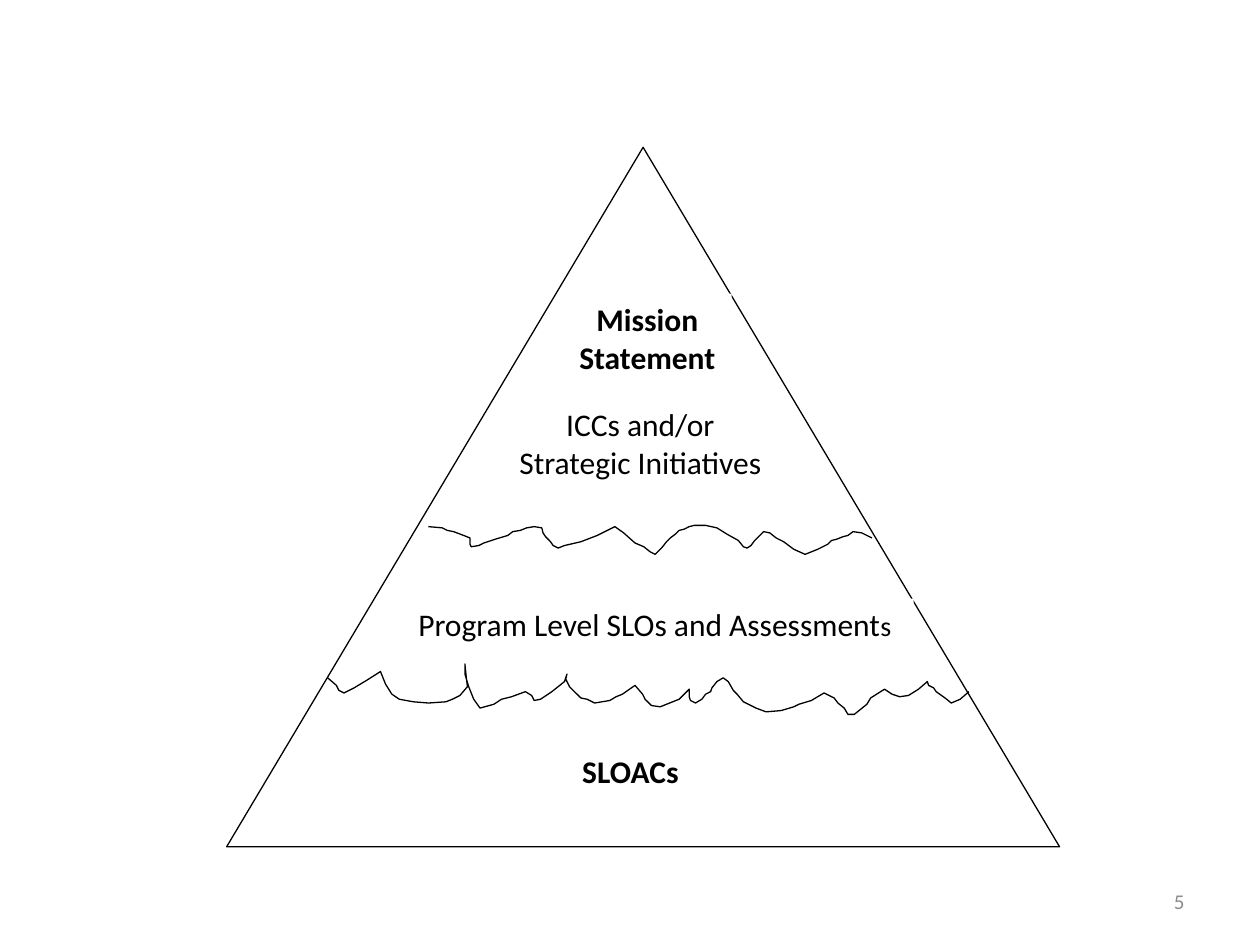
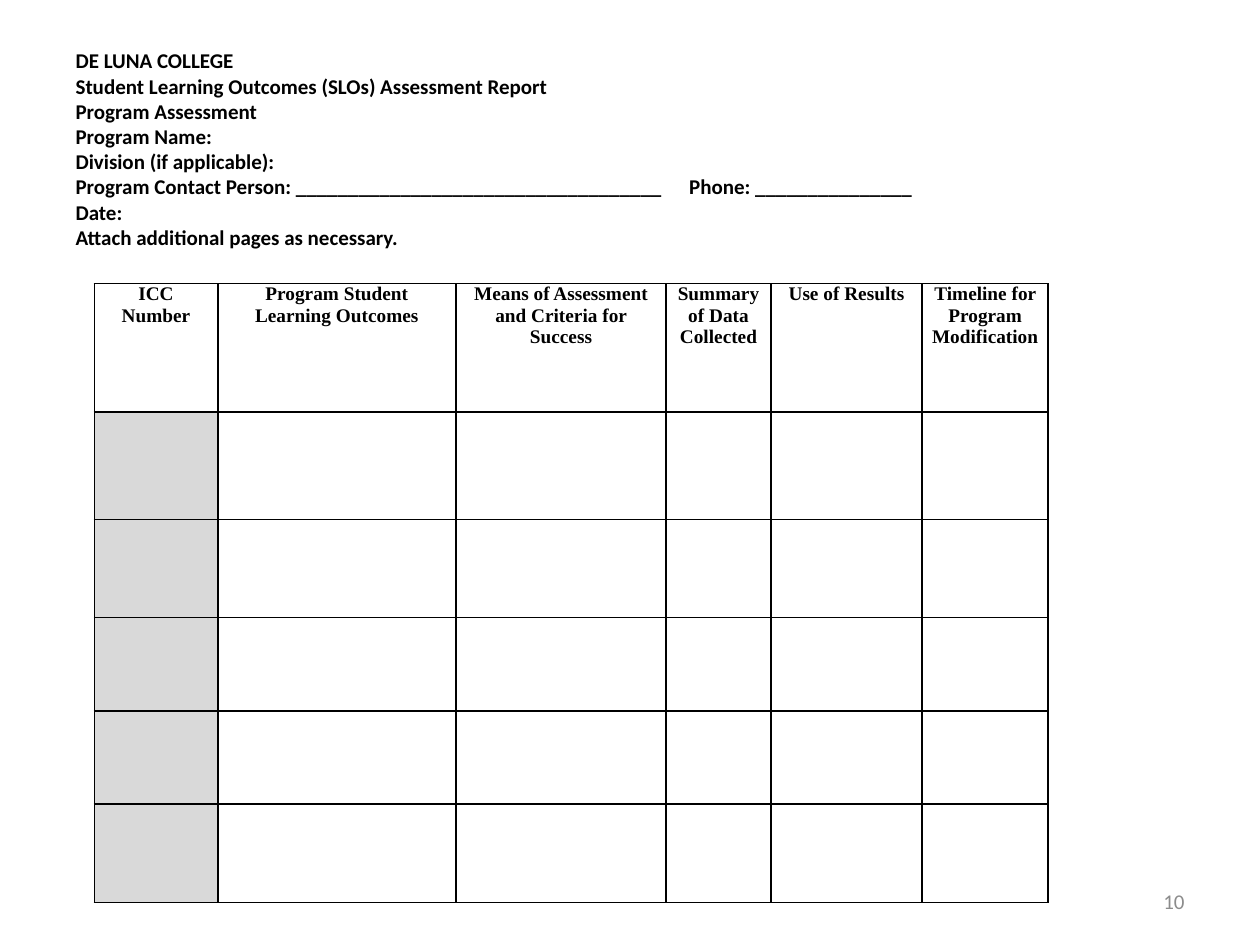
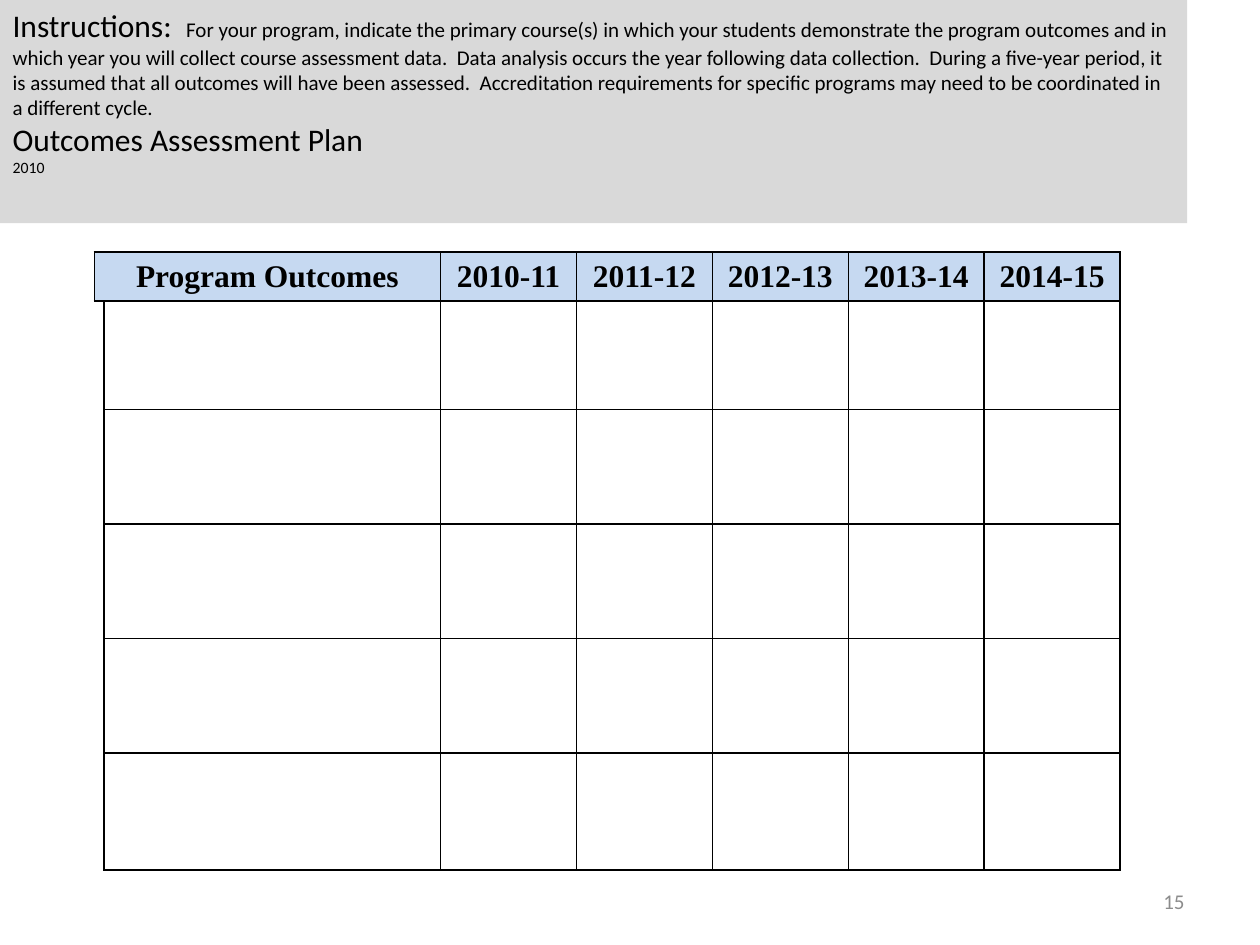
from dataclasses import dataclass

from lxml import etree
from pptx import Presentation
from pptx import util as u
from pptx.dml.color import RGBColor
from pptx.enum import shapes, text
from pptx.oxml import ns

Cm, Pt = u.Cm, u.Pt
LEFT, CENTER, RIGHT = text.PP_ALIGN.LEFT, text.PP_ALIGN.CENTER, text.PP_ALIGN.RIGHT
TOP, MIDDLE = text.MSO_ANCHOR.TOP, text.MSO_ANCHOR.MIDDLE


@dataclass(frozen=True)
class Theme:
    ink: str = "000000"
    paper: str = "FFFFFF"
    grey: str = "D9D9D9"
    blue: str = "C6D9F1"
    page: str = "8C8C8C"
    sans: str = "Calibri"
    serif: str = "Times New Roman"
    large: float = 18
    medium: float = 16
    small: float = 12
    label: float = 11
    tiny: float = 9
    outline: float = 0.75
    border: float = 1


THEME = Theme()
TITLE_ONLY, BLANK = 5, 6

# Points along the two torn edges, in hundredths of an inch
UPPER_EDGE = [
    (340, 418), (351, 419), (355, 421), (360, 422), (368, 425), (373, 427),
    (373, 432), (374, 434), (380, 433), (384, 431), (393, 428), (403, 425),
    (407, 422), (413, 421), (418, 419), (424, 418), (430, 419), (431, 423),
    (433, 426), (437, 430), (439, 433), (443, 435), (448, 433), (461, 430),
    (474, 425), (480, 422), (488, 418), (495, 423), (504, 431), (511, 434),
    (516, 438), (520, 440), (525, 435), (529, 430), (532, 427), (536, 424),
    (539, 421), (543, 420), (547, 418), (551, 417), (560, 417), (569, 419),
    (577, 424), (586, 429), (590, 434), (593, 435), (596, 433), (599, 429),
    (602, 426), (606, 422), (611, 423), (616, 427), (622, 430), (630, 436),
    (639, 440), (649, 436), (657, 432), (660, 429), (664, 428), (669, 426),
    (673, 425), (677, 422), (684, 423), (692, 427),
]
LOWER_EDGE = [
    (260, 538), (267, 544), (269, 548), (273, 550), (281, 546), (291, 540),
    (302, 533), (306, 543), (311, 551), (317, 555), (328, 557), (340, 558),
    (354, 557), (359, 555), (365, 552), (371, 545), (370, 537), (369, 527),
    (369, 535), (372, 545), (376, 555), (381, 562), (392, 559), (398, 555),
    (406, 553), (417, 549), (422, 552), (424, 556), (429, 555), (438, 549),
    (448, 541), (450, 535), (449, 539), (452, 545), (457, 550), (461, 554),
    (466, 555), (472, 558), (484, 556), (489, 553), (494, 551), (504, 544),
    (510, 551), (512, 555), (517, 560), (524, 561), (539, 555), (547, 547),
    (547, 553), (548, 556), (552, 558), (557, 555), (560, 551), (564, 549),
    (565, 546), (569, 541), (574, 538), (578, 541), (582, 548), (585, 551),
    (590, 557), (600, 562), (608, 565), (620, 564), (630, 561), (634, 559),
    (644, 556), (654, 550), (662, 554), (665, 558), (670, 562), (673, 567),
    (678, 567), (688, 559), (691, 554), (702, 547), (708, 551), (714, 553),
    (721, 552), (729, 547), (736, 541), (737, 544), (741, 546), (743, 549),
    (750, 554), (755, 558), (762, 555), (769, 549),
]


def set_all(target, values):
    for attribute, value in values.items():
        setattr(target, attribute, value)


def box(left, top, width, height):
    return dict(left=Cm(left), top=Cm(top), width=Cm(width), height=Cm(height))


def paint(fill, color):
    fill.solid()
    fill.fore_color.rgb = RGBColor.from_string(color)


def write(frame, lines, align=LEFT, anchor=TOP, color=THEME.ink, font=THEME.sans,
          bold=False, after=0):
    """Fill a text frame; each line is a list of (words, size) pieces."""
    set_all(frame, dict(word_wrap=True, vertical_anchor=anchor))
    for index, pieces in enumerate(lines):
        paragraph = frame.add_paragraph() if index else frame.paragraphs[0]
        set_all(paragraph, dict(alignment=align, space_after=Pt(after)))
        for words, size in pieces:
            run = paragraph.add_run()
            run.text = words
            set_all(run.font, dict(name=font, size=Pt(size), bold=bold))
            run.font.color.rgb = RGBColor.from_string(color)


def add_heading(slide, place, lines, **style):
    title = slide.shapes.title
    set_all(title, place)
    title.text_frame.auto_size = text.MSO_AUTO_SIZE.NONE
    write(title.text_frame, lines, **style)
    return title


def add_tab_stop(paragraph, position):
    properties = paragraph._p.get_or_add_pPr()
    stops = etree.SubElement(properties, ns.qn("a:tabLst"))
    etree.SubElement(stops, ns.qn("a:tab"), pos=str(position), algn="l")


def add_page_number(slide, number):
    corner = slide.shapes.add_textbox(**box(18.21, 17.65, 5.92, 1.02))
    write(corner.text_frame, [[(str(number), THEME.small)]],
          align=RIGHT, anchor=MIDDLE, color=THEME.page)


def outline(shape):
    shape.shadow.inherit = False
    shape.line.width = Pt(THEME.outline)
    shape.line.color.rgb = RGBColor.from_string(THEME.ink)


def add_pyramid(slide, place):
    pyramid = slide.shapes.add_shape(shapes.MSO_SHAPE.ISOSCELES_TRIANGLE, **place)
    paint(pyramid.fill, THEME.paper)
    outline(pyramid)


def add_level(slide, place, lines, **style):
    level = slide.shapes.add_textbox(**place)
    paint(level.fill, THEME.paper)
    write(level.text_frame, lines, align=CENTER, **style)


def add_torn_edge(slide, points):
    builder = slide.shapes.build_freeform(*points[0], scale=Cm(2.54) / 100)
    builder.add_line_segments(points[1:], close=False)
    edge = builder.convert_to_shape()
    edge.fill.background()
    outline(edge)


def add_borders(cell, sides):
    """Rule the named sides (of L, R, T, B) and clear the others."""
    properties = cell._tc.get_or_add_tcPr()
    for index, side in enumerate("LRTB"):
        rule = etree.Element(ns.qn(f"a:ln{side}"), w=str(Pt(THEME.border)))
        if side in sides:
            solid = etree.SubElement(rule, ns.qn("a:solidFill"))
            etree.SubElement(solid, ns.qn("a:srgbClr"), val=THEME.ink)
        else:
            etree.SubElement(rule, ns.qn("a:noFill"))
        properties.insert(index, rule)


def add_grid(slide, left, top, widths, heights, fill_at, sides_at):
    """Add an empty ruled table; fill_at and sides_at take (row, column)."""
    grid = slide.shapes.add_table(
        len(heights), len(widths),
        **box(left, top, sum(widths), sum(heights))).table
    set_all(grid, dict(first_row=False, horz_banding=False))
    for column, width in zip(grid.columns, widths):
        column.width = Cm(width)
    for r, (row, height) in enumerate(zip(grid.rows, heights)):
        row.height = Cm(height)
        for c, cell in enumerate(row.cells):
            set_all(cell, dict(margin_left=0, margin_right=0, margin_top=0, margin_bottom=0))
            paint(cell.fill, fill_at(r, c))
            add_borders(cell, sides_at(r, c))
    return grid


def write_headers(cells, headers, size, margin, anchor):
    for cell, header in zip(cells, headers):
        set_all(cell, dict(margin_left=Cm(margin), margin_right=Cm(margin),
                           vertical_anchor=anchor))
        write(cell.text_frame, [[(header, size)]], align=CENTER, anchor=anchor,
              font=THEME.serif, bold=True)


def build_pyramid_slide(slide):
    big = THEME.large
    add_pyramid(slide, box(4.57, 2.97, 16.79, 14.1))
    add_level(slide, box(11.35, 5.92, 3.4, 1.88),
              [[("Mission", big)], [("Statement", big)]], bold=True)
    add_level(slide, box(8.33, 15.04, 8.76, 1.35), [[("SLOACs", big)]], bold=True, after=10)
    add_level(slide, box(7.98, 12.07, 10.44, 1.17),
              [[("Program Level SLOs and Assessment", big), ("s", THEME.medium)]], after=10)
    add_level(slide, box(10.08, 8.05, 5.66, 2.79),
              [[("ICCs and/or", big)], [("Strategic Initiatives", big)]])
    for points in (UPPER_EDGE, LOWER_EDGE):
        add_torn_edge(slide, points)


def build_report_slide(slide):
    contact = f"Program Contact Person: {'_' * 35}\tPhone: {'_' * 15}"
    lines = ["DE LUNA COLLEGE", "Student Learning Outcomes (SLOs) Assessment Report",
             "Program Assessment", "Program Name:", "Division (if applicable):",
             contact, "Date:", "Attach additional pages as necessary."]
    heading = add_heading(slide, box(1.27, 0.84, 20.12, 5.13),
                          [[(line, THEME.small)] for line in lines], bold=True)
    add_tab_stop(heading.text_frame.paragraphs[lines.index(contact)], Cm(12.37))

    grid = add_grid(
        slide, 1.9, 5.72,
        widths=[2.49, 4.8, 4.24, 2.11, 3.05, 2.54],
        heights=[2.59, 2.16, 1.98, 1.88, 1.88, 1.98],
        fill_at=lambda r, c: THEME.grey if r and not c else THEME.paper,
        sides_at=lambda r, c: "LRTB")
    write_headers(grid.rows[0].cells,
                  ["ICC Number", "Program Student Learning Outcomes",
                   "Means of Assessment and Criteria for Success",
                   "Summary of Data Collected", "Use of Results",
                   "Timeline for Program Modification"],
                  THEME.label, 0.18, TOP)


def build_plan_slide(slide):
    instructions = (
        "For your program, indicate the primary course(s) in which your students "
        "demonstrate the program outcomes and in which year you will collect course "
        "assessment data.  Data analysis occurs the year following data collection.  "
        "During a five-year period, it is assumed that all outcomes will have been "
        "assessed.  Accreditation requirements for specific programs may need to be "
        "coordinated in a different cycle.")
    band = add_heading(slide, box(0, 0, 23.93, 4.5), [
        [("Instructions:  ", THEME.large), (instructions, THEME.small)],
        [("Outcomes Assessment Plan", THEME.large)],
        [("2010", THEME.tiny)]])
    paint(band.fill, THEME.grey)

    def sides_at(row, column):
        if row and not column:
            return "TR" if row == 1 else "R"
        return "LRTB"

    years = [f"{year}-{year % 100 + 1}" for year in range(2010, 2015)]
    grid = add_grid(
        slide, 1.9, 5.08,
        widths=[0.2, 6.78] + [2.74] * len(years),
        heights=[0.99, 2.18, 2.31, 2.31, 2.31, 2.36],
        fill_at=lambda r, c: THEME.paper if r else THEME.blue,
        sides_at=sides_at)
    grid.cell(0, 0).merge(grid.cell(0, 1))
    header_cells = [cell for cell in grid.rows[0].cells if not cell.is_spanned]
    write_headers(header_cells, ["Program Outcomes"] + years, THEME.large, 0.13, MIDDLE)


def main():
    deck = Presentation()
    set_all(deck, dict(slide_width=Cm(25.4), slide_height=Cm(19.05)))
    for build, layout, number in ((build_pyramid_slide, BLANK, 5),
                                  (build_report_slide, TITLE_ONLY, 10),
                                  (build_plan_slide, TITLE_ONLY, 15)):
        slide = deck.slides.add_slide(deck.slide_layouts[layout])
        build(slide)
        add_page_number(slide, number)
    deck.save("out.pptx")


if __name__ == "__main__":
    main()
